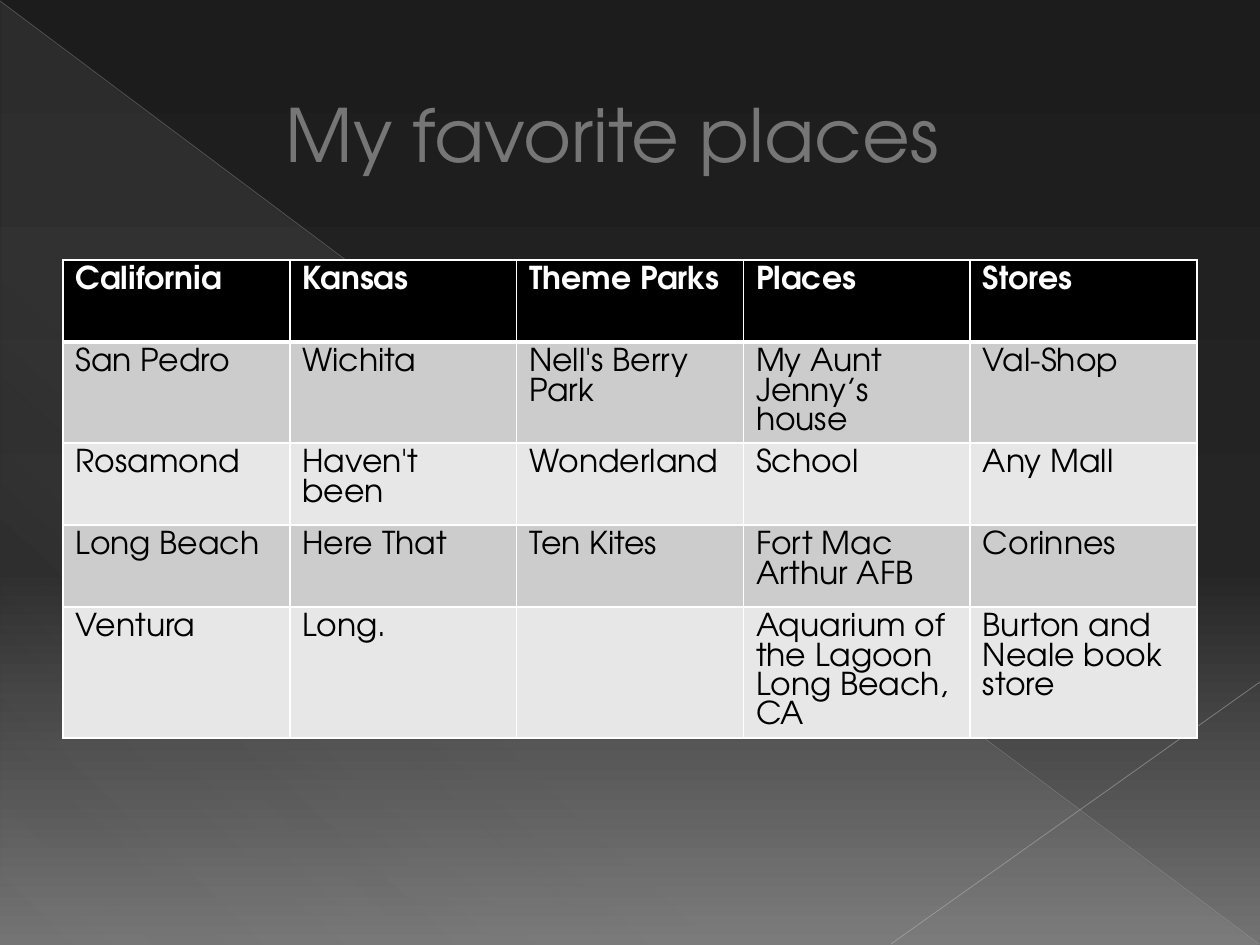
import pptx
import pptx.dml.color
import pptx.enum.shapes
import pptx.enum.text
import pptx.oxml
import pptx.oxml.ns
import pptx.util
from lxml import etree

FONT = "TeX Gyre Adventor"
SLIDE_BOX = (0, 0, 1260, 945)
TITLE_BOX = (63, 37, 1134, 193)
TABLE_BOX = (63, 260, 1134, 478)
ROW_HEIGHTS = [82, 101, 82, 82, 131]
ROWS = [
    ["California", "Kansas", "Theme Parks", "Places", "Stores"],
    ["San Pedro", "Wichita", "Nell's Berry Park", "My Aunt Jenny’s house", "Val-Shop"],
    ["Rosamond", "Haven't been", "Wonderland", "School", "Any Mall"],
    ["Long Beach", "Here That", "Ten Kites", "Fort Mac Arthur AFB", "Corinnes"],
    ["Ventura", "Long.", "", "Aquarium of the Lagoon Long Beach, CA",
     "Burton and Neale book store"],
]


def px(length):
    return pptx.util.Emu(round(length * 914400 / 126))


def color(hex_string):
    return pptx.dml.color.RGBColor.from_string(hex_string)


def add_child(parent, tag, **attributes):
    values = {name: str(value) for name, value in attributes.items()}
    return etree.SubElement(parent, pptx.oxml.ns.qn(tag), values)


def add_rgb(parent, hex_string, opacity=100):
    rgb = add_child(parent, "a:srgbClr", val=hex_string)
    if opacity < 100:
        add_child(rgb, "a:alpha", val=opacity * 1000)


def set_gradient(properties, stops, angle):
    """Replace a solid fill by stops of (position, colour, opacity in percent)."""
    solid = properties.find(pptx.oxml.ns.qn("a:solidFill"))
    gradient = etree.Element(pptx.oxml.ns.qn("a:gradFill"), rotWithShape="1")
    stop_list = add_child(gradient, "a:gsLst")
    for position, hex_string, opacity in stops:
        add_rgb(add_child(stop_list, "a:gs", pos=position * 1000), hex_string, opacity)
    add_child(gradient, "a:lin", ang=angle * 60000, scaled=0)
    properties.replace(solid, gradient)


def add_line(slide, start, end, hex_string, width, opacity):
    line = slide.shapes.add_connector(
        pptx.enum.shapes.MSO_CONNECTOR.STRAIGHT, *map(px, start + end))
    line.line.width = pptx.util.Pt(width)
    line.line.color.rgb = color(hex_string)
    properties = line._element.spPr
    rgb = next(properties.iter(pptx.oxml.ns.qn("a:srgbClr")))
    add_child(rgb, "a:alpha", val=opacity * 1000)
    add_child(properties, "a:effectLst")


def add_backdrop(slide, box):
    left, top, width, height = box
    right, bottom = left + width, top + height
    slide.background.fill.solid()
    background = next(slide._element.iter(pptx.oxml.ns.qn("p:bgPr")))
    set_gradient(background, [(0, "1C1C1C", 100), (60, "252525", 100),
                              (100, "737373", 100)], 90)
    triangle = slide.shapes.add_shape(
        pptx.enum.shapes.MSO_SHAPE.RIGHT_TRIANGLE,
        px(left + 1), px(top + 2), px(width - 2), px(height - 2))
    triangle.shadow.inherit = False
    triangle.line.fill.background()
    triangle.fill.solid()
    set_gradient(triangle._element.spPr, [(0, "D2D2D2", 10), (70, "D2D2D2", 8),
                                          (100, "D2D2D2", 1)], 133)
    add_line(slide, (left, top + 1), (right - 1, bottom - 1), "B5B5B5", 0.39, 35)
    add_line(slide, (right, top + 682), (left + 891, bottom - 1), "BEBEBE", 0.47, 45)


def format_paragraph(paragraph, size, hex_string, bold=False):
    paragraph.alignment = pptx.enum.text.PP_ALIGN.LEFT
    paragraph.font.name = FONT
    paragraph.font.size = pptx.util.Pt(size)
    paragraph.font.bold = bold
    paragraph.font.color.rgb = color(hex_string)


def place_title(slide, box):
    title = slide.shapes.title
    title.left, title.top, title.width, title.height = map(px, box)
    slide.shapes._spTree.append(title._element)  # in front of the backdrop
    frame = title.text_frame
    frame.text = "My favorite places"
    frame.vertical_anchor = pptx.enum.text.MSO_ANCHOR.MIDDLE
    paragraph = frame.paragraphs[0]
    format_paragraph(paragraph, 42, "767676")
    properties = paragraph._element.get_or_add_pPr()
    properties.set("marL", str(px(210)))
    properties.set("indent", "0")


def set_borders(cell, bottom_width):
    properties = cell._tc.get_or_add_tcPr()
    widths = {"a:lnL": 1, "a:lnR": 1, "a:lnT": 1, "a:lnB": bottom_width}
    for position, (tag, width) in enumerate(widths.items()):
        border = add_child(properties, tag, w=pptx.util.Pt(width))
        add_rgb(add_child(border, "a:solidFill"), "FFFFFF")
        properties.insert(position, border)


def add_places_table(slide, box):
    table = slide.shapes.add_table(len(ROWS), len(ROWS[0]), *map(px, box)).table
    for column in table.columns:
        column.width = px(box[2] / len(ROWS[0]))
    for row_index, (texts, height) in enumerate(zip(ROWS, ROW_HEIGHTS)):
        table.rows[row_index].height = px(height)
        header = row_index == 0
        fill = "000000" if header else ("E7E7E7", "CCCCCC")[row_index % 2]
        for column_index, text in enumerate(texts):
            cell = table.cell(row_index, column_index)
            cell.text = text
            cell.fill.solid()
            cell.fill.fore_color.rgb = color(fill)
            set_borders(cell, 3 if header else 1)
            format_paragraph(cell.text_frame.paragraphs[0], 18,
                             "FFFFFF" if header else "000000", header)


def main():
    presentation = pptx.Presentation()
    presentation.slide_width, presentation.slide_height = map(px, SLIDE_BOX[2:])
    slide = presentation.slides.add_slide(presentation.slide_layouts[5])
    add_backdrop(slide, SLIDE_BOX)
    place_title(slide, TITLE_BOX)
    add_places_table(slide, TABLE_BOX)
    presentation.save("out.pptx")


if __name__ == "__main__":
    main()
